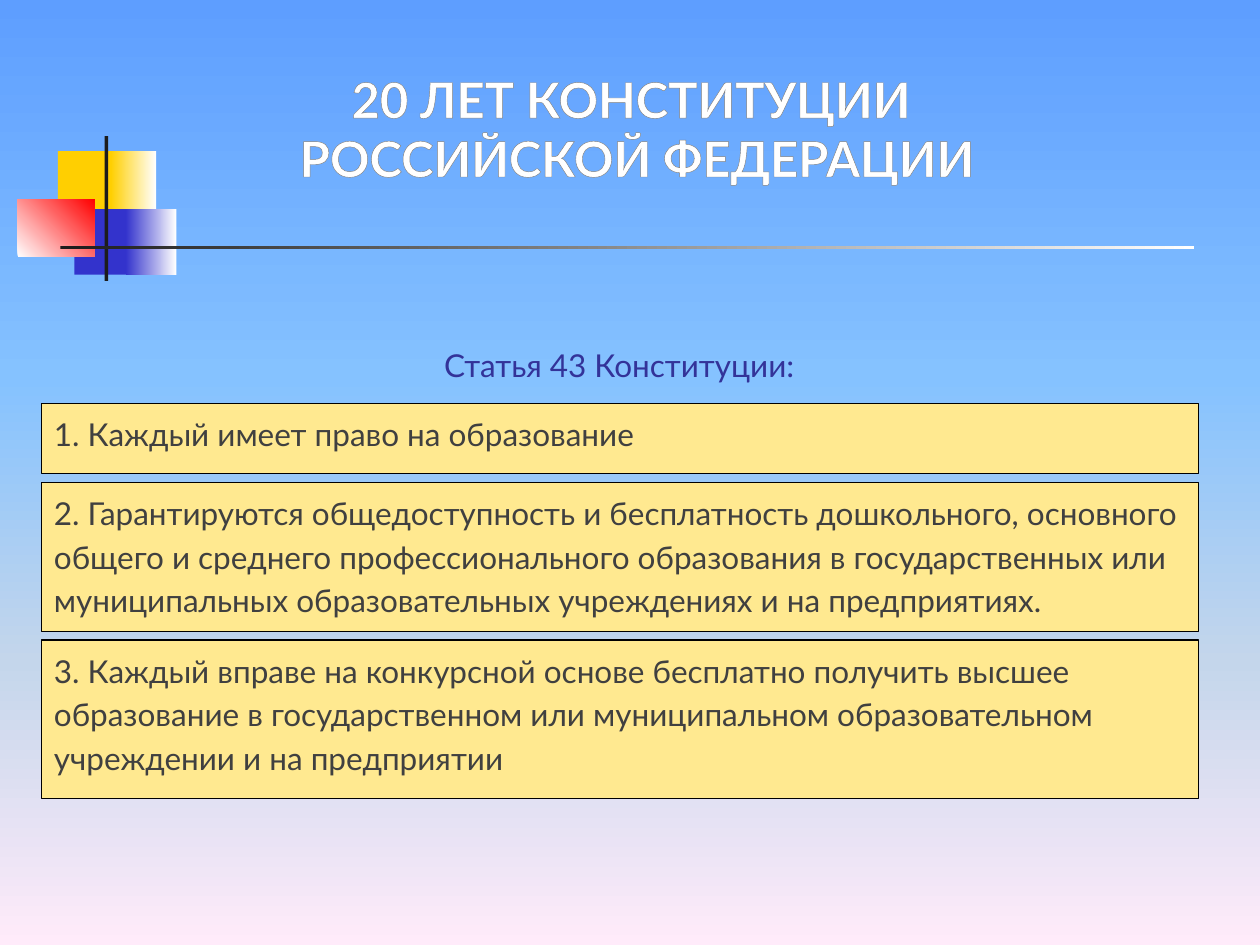
from pptx import Presentation, util as u
from pptx.dml.color import RGBColor
from pptx.enum import shapes, text
from pptx.oxml import parse_xml
from pptx.oxml.ns import qn, nsdecls

WIDE, HIGH = 10, 7.5
FONT = "Lato"
SKY = [(0, "5E9EFF"), (40, "85C2FF"), (70, "C4D6EB"), (100, "FFEBFA")]
DECOR = [
    ((0.46, 1.2, 0.48, 0.52), ["FFCF01"], 0),
    ((0.88, 1.2, 0.36, 0.52), ["FFCF01", "FFFFFF"], 0),
    ((0.59, 1.66, 0.46, 0.52), ["3333CC"], 0),
    ((1, 1.66, 0.4, 0.52), ["3333CC", "FFFFFF"], 0),
    ((0.14, 1.58, 0.61, 0.46), ["FFFFFF", "FF0000"], 315),
    ((0.83, 1.08, 0.03, 1.15), ["1C1C1C"], 0),
    ((0.48, 1.95, 9, 0.03), ["1C1C1C", "FFFFFF"], 0),
]
TITLE = "20 ЛЕТ КОНСТИТУЦИИ \vРОССИЙСКОЙ ФЕДЕРАЦИИ"
HEAD = "Статья 43 Конституции:"
RULES = [
    (0.56, 8.4, "1. Каждый имеет право на образование"),
    (1.18, 10, "2. Гарантируются общедоступность и бесплатность дошкольного, "
     "основного общего и среднего профессионального образования в "
     "государственных или муниципальных образовательных учреждениях и на "
     "предприятиях."),
    (1.26, 8.4, "3. Каждый вправе на конкурсной основе бесплатно получить "
     "высшее образование в государственном или муниципальном "
     "образовательном учреждении и на предприятии"),
]
LEFT, TOP, SPAN, GAP = 0.33, 3.2, 9.18, 0.07


def color(code):
    return RGBColor.from_string(code)


def place(box):
    return [u.Inches(n) for n in box]


def grade(owner, fill, stops, angle):
    fill.gradient()
    node = next(owner.element.iter(qn("a:gradFill")))
    row = node.find(qn("a:gsLst"))
    for old in list(row):
        row.remove(old)
    for pos, code in stops:
        row.append(parse_xml(
            f'<a:gs {nsdecls("a")} pos="{pos * 1000}">'
            f'<a:srgbClr val="{code}"/></a:gs>'))
    node.find(qn("a:lin")).set("ang", str(angle * 60000))


def block(slide, kind, box, codes, angle=0, edge=None):
    item = slide.shapes.add_shape(kind, *place(box))
    item.shadow.inherit = False
    if len(codes) > 1:
        grade(item, item.fill, list(zip((0, 100), codes)), angle)
    else:
        item.fill.solid()
        item.fill.fore_color.rgb = color(codes[0])
    if edge:
        item.line.color.rgb = color(edge)
        item.line.width = u.Pt(0.75)
    else:
        item.line.fill.background()
    return item


def write(item, words, size=18, tint="404040", bold=False, mid=False,
          lead=None, before=0, after=0, wrap=True, rim=None):
    frame = item.text_frame
    frame.word_wrap = wrap
    frame.vertical_anchor = text.MSO_ANCHOR.TOP
    para = frame.paragraphs[0]
    para.text = words
    para.alignment = text.PP_ALIGN.CENTER if mid else text.PP_ALIGN.LEFT
    para.line_spacing = lead
    para.space_before, para.space_after = u.Pt(before), u.Pt(after)
    for run in para.runs:
        font = run.font
        font.name, font.size, font.bold = FONT, u.Pt(size), bold
        font.color.rgb = color(tint)
        if rim:
            run.font._element.insert(0, parse_xml(
                f'<a:ln {nsdecls("a")} w="12700"><a:solidFill>'
                f'<a:srgbClr val="{rim}"/></a:solidFill></a:ln>'))


def main():
    deck = Presentation()
    deck.slide_width, deck.slide_height = u.Inches(WIDE), u.Inches(HIGH)
    slide = deck.slides.add_slide(deck.slide_layouts[6])
    grade(slide, slide.background.fill, SKY, 90)

    for box, codes, angle in DECOR:
        block(slide, shapes.MSO_SHAPE.RECTANGLE, box, codes, angle)

    head = slide.shapes.add_textbox(*place((LEFT, 2.65, 9.17, 0.55)))
    write(head, HEAD, tint="333399", mid=True, lead=1.15, before=3.6, after=10)
    title = slide.shapes.add_textbox(*place((2.19, 0.5, 5.73, 1.04)))
    write(title, TITLE, size=28, tint="FFFFFF", bold=True, mid=True,
          wrap=False, rim="808080")

    top = TOP
    for high, after, words in RULES:
        card = block(slide, shapes.MSO_SHAPE.ROUNDED_RECTANGLE,
                     (LEFT, top, SPAN, high), ["FFE990"], edge="000000")
        card.adjustments[0] = 0
        write(card, words, lead=1.15, after=after)
        top += high + GAP

    deck.save("out.pptx")


if __name__ == "__main__":
    main()
